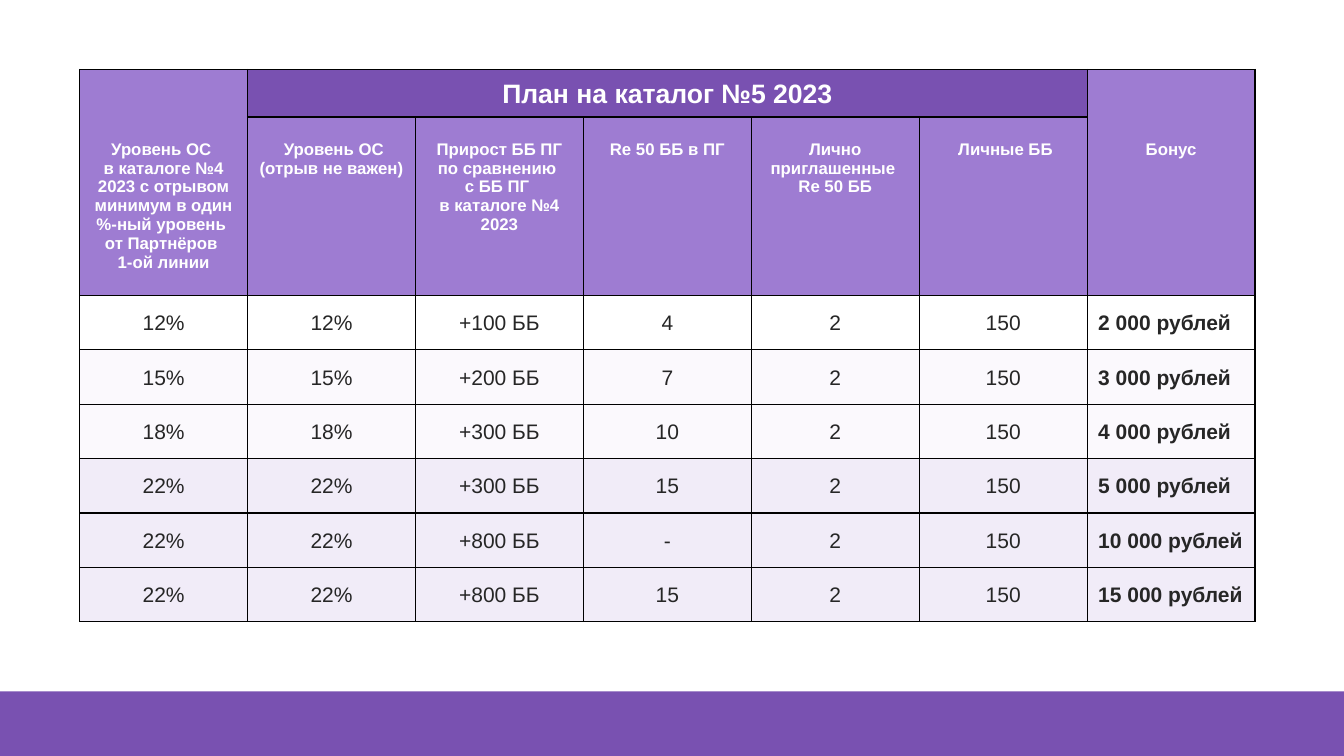
import pptx
import pptx.util
import pptx.dml.color
import pptx.enum.shapes
import pptx.enum.text
from lxml import etree
from pptx.util import Inches, Pt

COLORS = {
    "deep": "7951B1", "mid": "9E7CD2", "pale": "FBF9FD", "tint": "F1ECF8",
    "white": "FFFFFF", "ink": "262626", "line": "000000",
}
ALIGN = pptx.enum.text.PP_ALIGN
ANCHOR = pptx.enum.text.MSO_ANCHOR
NS = "{http://schemas.openxmlformats.org/drawingml/2006/main}"


def rgb(name):
    return pptx.dml.color.RGBColor.from_string(COLORS[name])


def write(cell, text, size=12, color="white", bold=True, align=ALIGN.CENTER,
          anchor=ANCHOR.TOP, spacing=None, after=None, indent=0):
    cell.margin_left = cell.margin_right = Inches(0.07)
    cell.margin_top = cell.margin_bottom = 0
    cell.vertical_anchor = anchor
    para = cell.text_frame.paragraphs[0]
    para.text = text
    para.alignment = align
    if spacing:
        para.line_spacing = spacing
        para.space_after = Pt(after)
    if indent:
        para._p.get_or_add_pPr().set("marL", str(Inches(indent)))
    for run in para.runs:
        run.font.name = "Arial"
        run.font.size = Pt(size)
        run.font.bold = bold
        run.font.color.rgb = rgb(color)
    if not text:
        etree.SubElement(para._p, NS + "endParaRPr", sz=str(size * 100))


def border(cell, sides):
    """Draw the named sides (of L, R, T, B) and clear the others."""
    props = cell._tc.get_or_add_tcPr()
    for side in "LRTB":
        line = etree.SubElement(props, NS + "ln" + side, w=str(Pt(1)))
        if side in sides:
            fill = etree.SubElement(line, NS + "solidFill")
            etree.SubElement(fill, NS + "srgbClr", val=COLORS["line"])
        else:
            etree.SubElement(line, NS + "noFill")


deck = pptx.Presentation()
deck.slide_width = Inches(13.33)
deck.slide_height = Inches(7.5)
slide = deck.slides.add_slide(deck.slide_layouts[6])

band = slide.shapes.add_shape(pptx.enum.shapes.MSO_SHAPE.RECTANGLE,
                              0, Inches(6.86), Inches(13.33), Inches(0.64))
band.shadow.inherit = False
band.fill.solid()
band.fill.fore_color.rgb = rgb("deep")
band.line.fill.background()

heads = [
    "Уровень ОС \nв каталоге №4 2023 с отрывом минимум в один %-ный уровень \n"
    "от Партнёров \n1-ой линии",
    " Уровень ОС (отрыв не важен)",
    " Прирост ББ ПГ \nпо сравнению \nс ББ ПГ \nв каталоге №4 2023",
    "Re 50 ББ в ПГ",
    "Лично приглашенные \nRe 50 ББ",
    " Личные ББ",
    "Бонус",
]
# level, growth, sign-ups, bonus, row fill
plans = [
    ("12%", "+100 ББ", "4", "2 000 рублей", None),
    ("15%", "+200 ББ", "7", "3 000 рублей", "pale"),
    ("18%", "+300 ББ", "10", "4 000 рублей", "pale"),
    ("22%", "+300 ББ", "15", "5 000 рублей", "tint"),
    ("22%", "+800 ББ", "-", "10 000 рублей", "tint"),
    ("22%", "+800 ББ", "15", "15 000 рублей", "tint"),
]
texts = [["", "План на каталог №5 2023"] + [""] * 5, [""] * 7, heads]
fills = ["mid"] * 3
for level, growth, joins, bonus, tone in plans:
    texts.append([level, level, growth, joins, "2", "150", bonus])
    fills.append(tone)

heights = [0.47, 0.23, 1.54] + [0.54] * len(plans)
last = len(heads) - 1
frame = slide.shapes.add_table(len(texts), len(heads), Inches(0.79), Inches(0.69),
                               Inches(11.66), Inches(sum(heights)))
table = frame.table
table.first_row = table.horz_banding = False
for col in table.columns:
    col.width = Inches(11.66 / len(heads))
for row, height in zip(table.rows, heights):
    row.height = Inches(height)

body = dict(anchor=ANCHOR.MIDDLE, spacing=1.07, after=8)
for r, line in enumerate(texts):
    for c, text in enumerate(line):
        cell = table.cell(r, c)
        edge = c in (0, last)
        title = r == 0 and not edge
        if title or r > 2:
            sides = "LRTB"
        elif r == 2:
            sides = "LRB"
        else:
            sides = "LR" if r == 1 and edge else "LRT"
        border(cell, sides)

        tone = "deep" if title else fills[r]
        if tone:
            cell.fill.solid()
            cell.fill.fore_color.rgb = rgb(tone)
        else:
            cell.fill.background()

        if title and text:
            write(cell, text, size=19, **body)
        elif r < 3:
            write(cell, text)
        elif c == last:
            write(cell, text, size=15, color="ink", align=ALIGN.LEFT, indent=0.04, **body)
        else:
            write(cell, text, size=15, color="ink", bold=False, **body)

table.cell(0, 1).merge(table.cell(0, last - 1))
for c in (0, last):
    table.cell(0, c).merge(table.cell(1, c))

deck.save("out.pptx")
